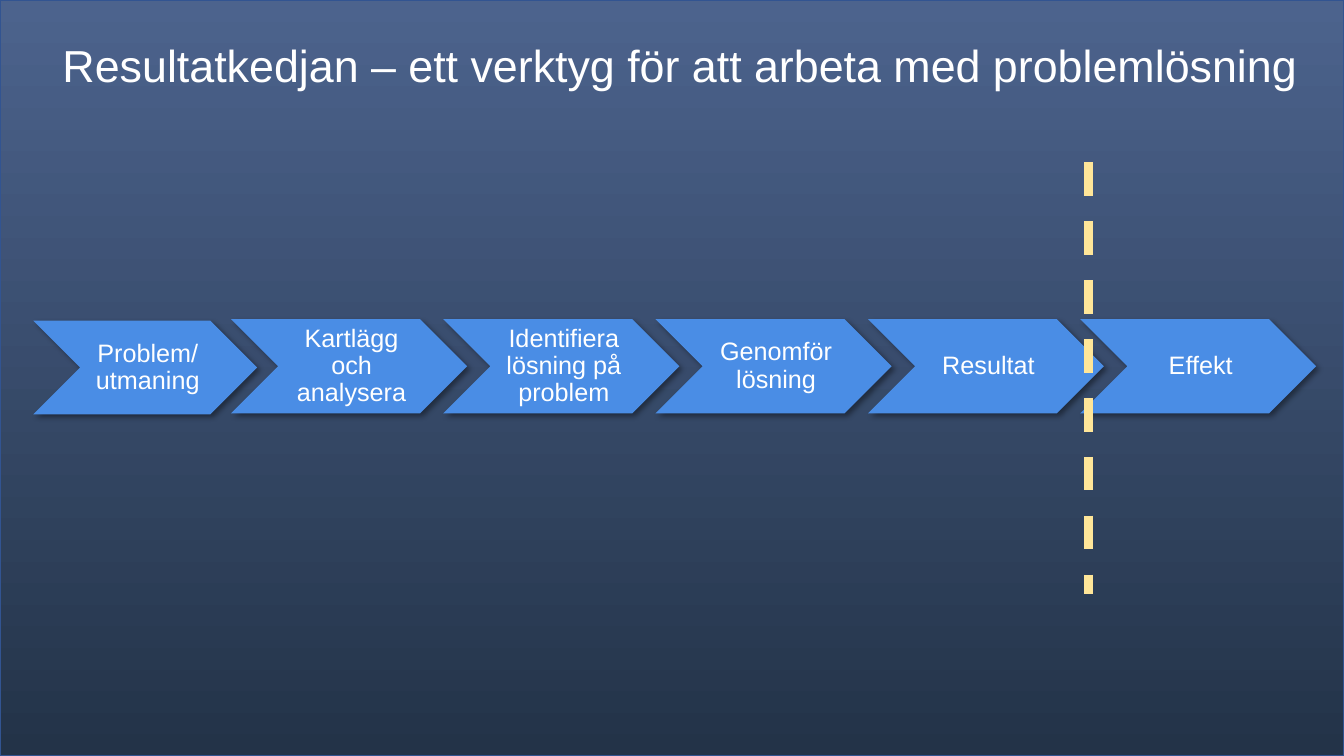
from lxml import etree
from pptx import Presentation
from pptx.dml.color import RGBColor
from pptx.enum.dml import MSO_LINE
from pptx.enum.shapes import MSO_CONNECTOR, MSO_SHAPE
from pptx.enum.text import MSO_ANCHOR, PP_ALIGN
from pptx.oxml.ns import qn
from pptx.util import Cm, Pt

RECT, CHEVRON = MSO_SHAPE.RECTANGLE, MSO_SHAPE.CHEVRON
STRAIGHT, DASH = MSO_CONNECTOR.STRAIGHT, MSO_LINE.DASH
TOP, MIDDLE = MSO_ANCHOR.TOP, MSO_ANCHOR.MIDDLE
LEFT, CENTER = PP_ALIGN.LEFT, PP_ALIGN.CENTER

WIDTH, HEIGHT = 33.87, 19.05
COLORS = {
    "sky": "4C638D",
    "night": "233348",
    "edge": "325491",
    "step": "4A8DE5",
    "goal": "FFE699",
    "text": "FFFFFF",
    "shade": "000000",
}
STEPS = [
    "Kartlägg och analysera",
    "Identifiera lösning på problem",
    "Genomför lösning",
    "Resultat",
    "Effekt",
]


def color(name):
    return RGBColor.from_string(COLORS[name])


class Board:
    """Holds the font and the slide that the elements are added to."""

    def __init__(self, slide, font="Arial"):
        self.slide = slide
        self.font = font

    def label(self, frame, text, size, align, anchor):
        frame.word_wrap = True
        frame.vertical_anchor = anchor
        para = frame.paragraphs[0]
        para.text = text
        para.alignment = align
        for run in para.runs:
            run.font.name = self.font
            run.font.size = Pt(size)
            run.font.color.rgb = color("text")
        return para

    def title(self, text, x, y, w, h):
        box = self.slide.shapes.title
        box.left, box.top, box.width, box.height = Cm(x), Cm(y), Cm(w), Cm(h)
        para = self.label(box.text_frame, text, 32, LEFT, TOP)
        para.line_spacing = 1.0

    def backdrop(self):
        """Cover the slide with a gradient, behind everything else."""
        shapes = self.slide.shapes
        rect = shapes.add_shape(RECT, 0, 0, Cm(WIDTH), Cm(HEIGHT))
        rect.shadow.inherit = False
        rect.fill.gradient()
        rect.fill.gradient_angle = 270
        for stop, name, place in zip(rect.fill.gradient_stops, ("sky", "night"), (0, 1)):
            stop.color.rgb = color(name)
            stop.position = place
        rect.line.color.rgb = color("edge")
        rect.line.width = Pt(1)
        shapes.element.insert(2, rect.element)

    def shade(self, shape):
        """Give the shape a soft shadow down to the right."""
        shape.shadow.inherit = False
        effects = shape.element.spPr.find(qn("a:effectLst"))
        outer = etree.SubElement(
            effects, qn("a:outerShdw"), blurRad=str(Pt(4)), dist=str(Pt(3)),
            dir="2700000", algn="tl", rotWithShape="0")
        tone = etree.SubElement(outer, qn("a:srgbClr"), val=COLORS["shade"])
        etree.SubElement(tone, qn("a:alpha"), val="40000")

    def step(self, text, x, y, w, h):
        shape = self.slide.shapes.add_shape(CHEVRON, Cm(x), Cm(y), Cm(w), Cm(h))
        shape.fill.solid()
        shape.fill.fore_color.rgb = color("step")
        shape.line.fill.background()
        self.shade(shape)
        frame = shape.text_frame
        frame.margin_left = Cm(0.2)
        frame.margin_right = frame.margin_top = frame.margin_bottom = Cm(0.07)
        para = self.label(frame, text, 18, CENTER, MIDDLE)
        para.line_spacing = 0.9

    def divider(self, x, top, bottom):
        line = self.slide.shapes.add_connector(
            STRAIGHT, Cm(x), Cm(top), Cm(x), Cm(bottom))
        line.line.color.rgb = color("goal")
        line.line.width = Pt(6)
        line.line.dash_style = DASH
        etree.SubElement(line.element.spPr, qn("a:effectLst"))


def main():
    deck = Presentation()
    deck.slide_width, deck.slide_height = Cm(WIDTH), Cm(HEIGHT)
    board = Board(deck.slides.add_slide(deck.slide_layouts[5]))
    board.backdrop()
    board.title("Resultatkedjan – ett verktyg för att arbeta med problemlösning",
                1.32, 0.82, 32.23, 2.39)
    board.step("Problem/\nutmaning", 0.84, 8.08, 5.64, 2.36)
    for i, text in enumerate(STEPS):
        board.step(text, 5.82 + 5.35 * i, 8.04, 5.95, 2.38)
    board.divider(27.43, 4.09, 14.96)
    deck.save("out.pptx")


if __name__ == "__main__":
    main()
